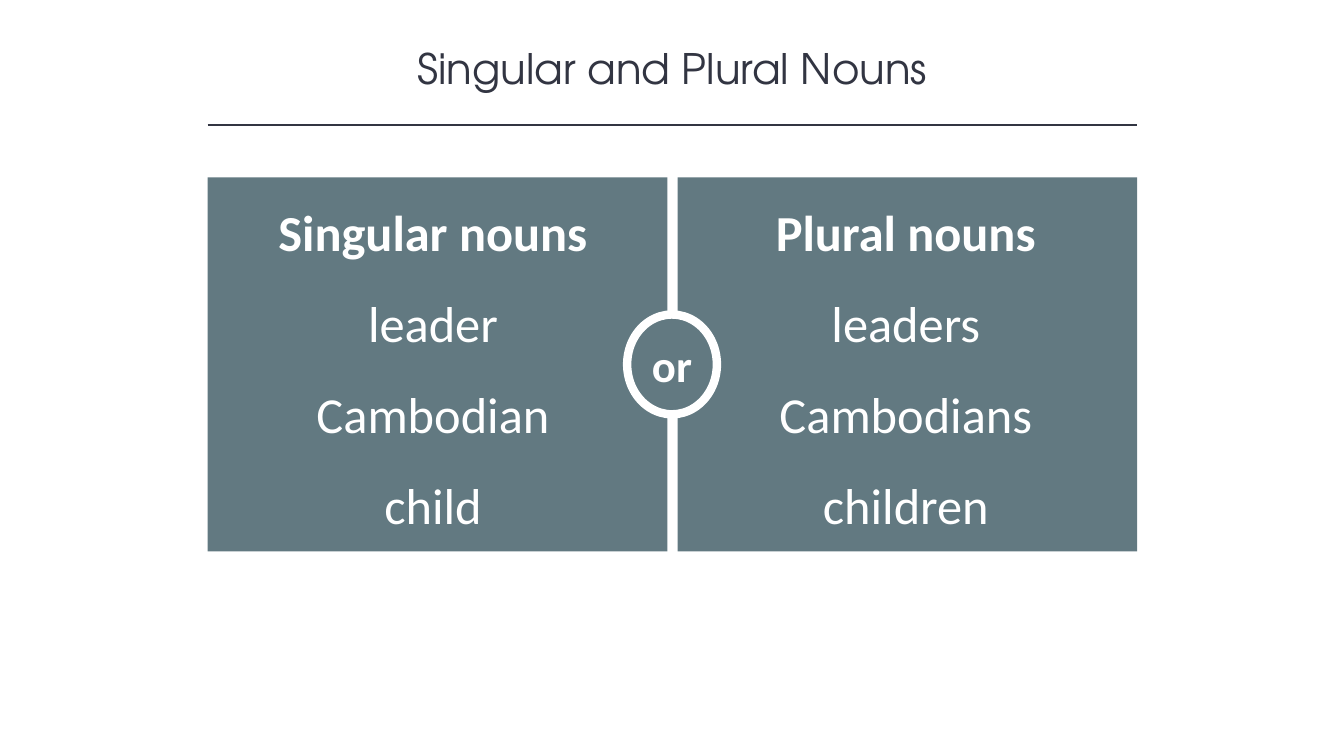
from dataclasses import dataclass

from lxml.etree import SubElement
from pptx import Presentation
from pptx.dml.color import RGBColor
from pptx.enum.shapes import MSO_CONNECTOR as Connector, MSO_SHAPE as Shape
from pptx.enum.text import MSO_ANCHOR as Anchor, PP_ALIGN as Align
from pptx.oxml.ns import qn
from pptx.util import Pt

PX = 9144  # EMU per px, 100 px to the inch


@dataclass(frozen=True)
class Theme:
    ink: RGBColor = RGBColor(0x32, 0x35, 0x42)
    panel: RGBColor = RGBColor(0x62, 0x79, 0x81)
    white: RGBColor = RGBColor(0xFF, 0xFF, 0xFF)
    title_font: str = "TeX Gyre Adventor"
    body_font: str = "Calibri"
    title_size: int = 30
    word_size: int = 36
    badge_size: int = 32
    rule_width: int = 1
    ring_width: int = 6


THEME = Theme()
PANEL_TOP, PANEL_WIDTH, PANEL_HEIGHT = 176, 456, 371
LEFT_EDGE, RIGHT_EDGE = 206, 1128
WORDS_TOP, WORDS_WIDTH, WORDS_HEIGHT = 163, 363, 374
COLUMNS = [
    (LEFT_EDGE, 248, "Singular nouns", ["leader", "Cambodian", "child"]),
    (RIGHT_EDGE - PANEL_WIDTH, 717, "Plural nouns", ["leaders", "Cambodians", "children"]),
]


def scaled(*lengths):
    return [length * PX for length in lengths]


def add_line(paragraph, text, font, size, color, bold=False):
    paragraph.alignment = Align.CENTER
    run = paragraph.add_run()
    run.text = text
    run.font.name = font
    run.font.size = Pt(size)
    run.font.bold = bold
    run.font.color.rgb = color


def add_title(slide, text):
    title = slide.shapes.add_textbox(*scaled(167, 37, 1000, 61))
    title.text_frame.word_wrap = True
    add_line(title.text_frame.paragraphs[0], text, THEME.title_font, THEME.title_size, THEME.ink)


def add_rule(slide, left, right, y):
    rule = slide.shapes.add_connector(Connector.STRAIGHT, *scaled(left, y, right, y))
    rule.line.color.rgb = THEME.ink
    rule.line.width = Pt(THEME.rule_width)
    SubElement(rule._element.spPr, qn("a:effectLst"))


def add_filled(slide, preset, box):
    """Add a panel-coloured shape without line or shadow."""
    shape = slide.shapes.add_shape(preset, *scaled(*box))
    shape.shadow.inherit = False
    shape.fill.solid()
    shape.fill.fore_color.rgb = THEME.panel
    shape.line.fill.background()
    return shape


def add_badge(slide, text):
    badge = add_filled(slide, Shape.OVAL, (622, 312, 89, 99))
    badge.line.color.rgb = THEME.white
    badge.line.width = Pt(THEME.ring_width)
    frame = badge.text_frame
    frame.word_wrap = False
    frame.vertical_anchor = Anchor.MIDDLE
    add_line(frame.paragraphs[0], text, THEME.body_font, THEME.badge_size, THEME.white, bold=True)


def add_words(slide, left, heading, nouns):
    words = slide.shapes.add_textbox(*scaled(left, WORDS_TOP, WORDS_WIDTH, WORDS_HEIGHT))
    frame = words.text_frame
    frame.word_wrap = True
    frame.vertical_anchor = Anchor.MIDDLE
    for index, text in enumerate([heading, *nouns]):
        paragraph = frame.add_paragraph() if index else frame.paragraphs[0]
        paragraph.line_spacing = 1.5
        add_line(paragraph, text, THEME.body_font, THEME.word_size, THEME.white, bold=index == 0)


def main():
    deck = Presentation()
    deck.slide_width, deck.slide_height = scaled(1333, 750)
    slide = deck.slides.add_slide(deck.slide_layouts[6])
    add_title(slide, "Singular and Plural Nouns")
    add_rule(slide, LEFT_EDGE, RIGHT_EDGE, 124)
    for panel_left, *_ in COLUMNS:
        add_filled(slide, Shape.RECTANGLE, (panel_left, PANEL_TOP, PANEL_WIDTH, PANEL_HEIGHT))
    add_badge(slide, "or")
    for _, words_left, heading, nouns in COLUMNS:
        add_words(slide, words_left, heading, nouns)
    deck.save("out.pptx")


if __name__ == "__main__":
    main()
